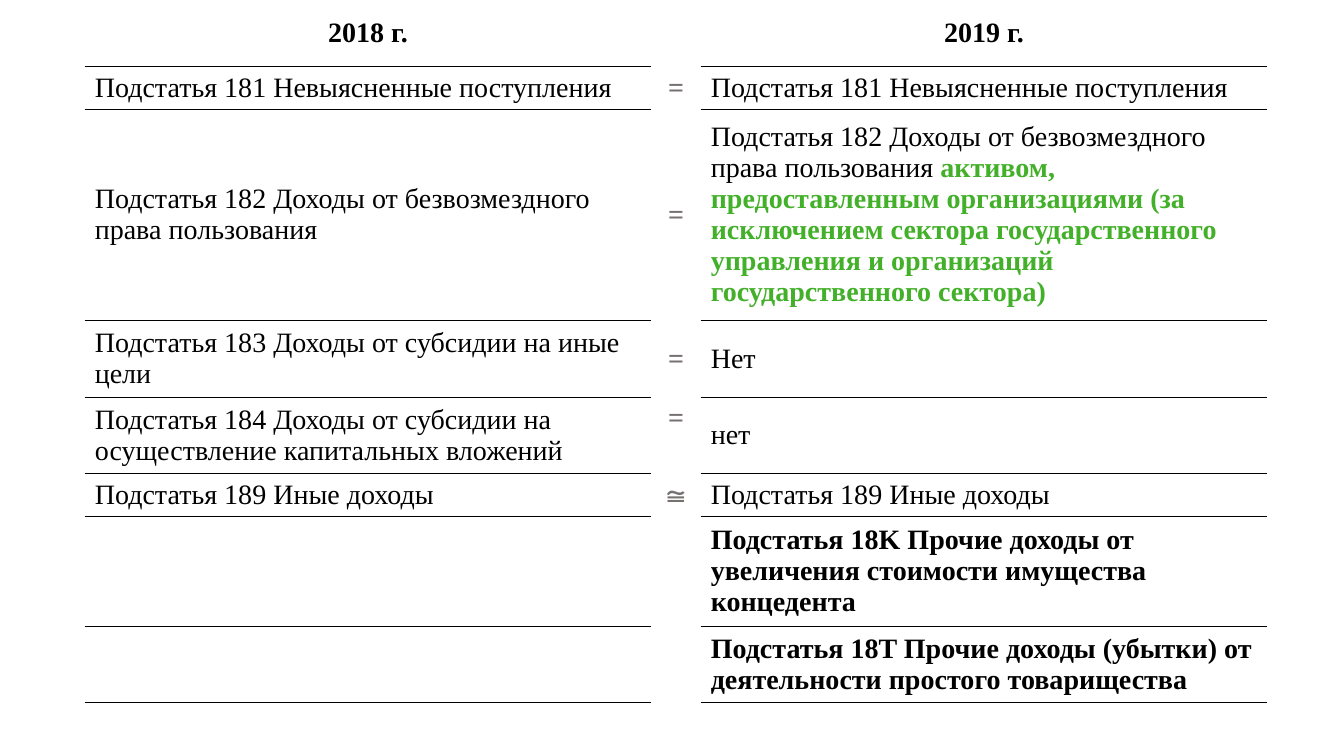
import dataclasses

import lxml.etree
import pptx
import pptx.dml.color
import pptx.enum.text
import pptx.oxml.ns
import pptx.util


@dataclasses.dataclass(frozen=True)
class Theme:
    font: str = "Times New Roman"
    size: float = 20
    text: str = "000000"
    sign: str = "767171"
    added: str = "43B02A"
    rule: float = 0.5
    header_rule: float = 1.5
    table_style: str = "{2D5ABB26-0587-4C30-8999-92F81FD0307C}"


THEME = Theme()
SLIDE_WIDTH, SLIDE_HEIGHT = 13.33, 7.5
TABLE_LEFT = 0.84
COLUMN_WIDTHS = (5.62, 0.49, 5.62)
ROW_HEIGHTS = (0.66, 0.42, 2.1, 0.76, 0.76, 0.42, 1.09, 0.76)
SIGN_COLUMN = 1
TOP_SIGN_ROW = 4

UNCLEAR = "Подстатья 181 Невыясненные поступления"
FREE_USE = "Подстатья 182 Доходы от безвозмездного права пользования"
FREE_USE_ADDED = (
    "активом, предоставленным организациями (за исключением сектора "
    "государственного управления и организаций государственного сектора)"
)
OTHER = "Подстатья 189 Иные доходы"


def plain(text):
    return [(text, THEME.text, False)]


def strong(text, color=THEME.text):
    return [(text, color, True)]


def sign(text):
    return strong(text, THEME.sign)


ROWS = (
    (strong("2018 г."), [], strong("2019 г.")),
    (plain(UNCLEAR), sign("="), plain(UNCLEAR)),
    (plain(FREE_USE), sign("="),
     plain(FREE_USE + " ") + strong(FREE_USE_ADDED, THEME.added)),
    (plain("Подстатья 183 Доходы от субсидии на иные цели"), sign("="), plain("Нет")),
    (plain("Подстатья 184 Доходы от субсидии на осуществление капитальных вложений"),
     sign("="), plain("нет")),
    (plain(OTHER), sign("≅"), plain(OTHER)),
    ([], [], strong("Подстатья 18K Прочие доходы от увеличения стоимости имущества концедента")),
    ([], [], strong("Подстатья 18T Прочие доходы (убытки) от деятельности простого товарищества")),
)


def add_rule(cell, side, width):
    properties = cell._tc.get_or_add_tcPr()
    line = lxml.etree.Element(pptx.oxml.ns.qn(f"a:{side}"), w=str(pptx.util.Pt(width)))
    fill = lxml.etree.SubElement(line, pptx.oxml.ns.qn("a:solidFill"))
    lxml.etree.SubElement(fill, pptx.oxml.ns.qn("a:srgbClr"), val=THEME.text)
    properties.insert(0, line)


def format_font(font, color, bold):
    font.color.rgb = pptx.dml.color.RGBColor.from_string(color)
    font.bold = bold


def write_cell(cell, pieces, centered):
    para = cell.text_frame.paragraphs[0]
    para.font.name = THEME.font
    para.font.size = pptx.util.Pt(THEME.size)
    if centered:
        para.alignment = pptx.enum.text.PP_ALIGN.CENTER
    for text, color, bold in pieces:
        span = para.add_run()
        span.text = text
        format_font(para.font if len(pieces) == 1 else span.font, color, bold)


def format_cell(cell, row, column):
    anchors = pptx.enum.text.MSO_ANCHOR
    at_top = (row, column) == (TOP_SIGN_ROW, SIGN_COLUMN)
    cell.vertical_anchor = anchors.TOP if at_top else anchors.MIDDLE
    cell.margin_left = cell.margin_right = pptx.util.Inches(0.1)
    cell.margin_top = cell.margin_bottom = pptx.util.Inches(0.05)
    cell.fill.background()
    if column != SIGN_COLUMN:
        add_rule(cell, "lnB", THEME.rule if row else THEME.header_rule)
        if row:
            add_rule(cell, "lnT", THEME.header_rule if row == 1 else THEME.rule)


def add_comparison(page):
    frame = page.shapes.add_table(
        len(ROWS), len(COLUMN_WIDTHS),
        pptx.util.Inches(TABLE_LEFT), 0,
        pptx.util.Inches(sum(COLUMN_WIDTHS)), pptx.util.Inches(sum(ROW_HEIGHTS)))
    table = frame.table
    table.horz_banding = False
    table.first_row = False
    table._tbl.tblPr.find(pptx.oxml.ns.qn("a:tableStyleId")).text = THEME.table_style
    for column, width in zip(table.columns, COLUMN_WIDTHS):
        column.width = pptx.util.Inches(width)
    for row, height in zip(table.rows, ROW_HEIGHTS):
        row.height = pptx.util.Inches(height)
    for row, contents in enumerate(ROWS):
        for column, pieces in enumerate(contents):
            cell = table.cell(row, column)
            format_cell(cell, row, column)
            write_cell(cell, pieces, row == 0 or column == SIGN_COLUMN)


def main():
    deck = pptx.Presentation()
    deck.slide_width = pptx.util.Inches(SLIDE_WIDTH)
    deck.slide_height = pptx.util.Inches(SLIDE_HEIGHT)
    page = deck.slides.add_slide(deck.slide_layouts[6])
    add_comparison(page)
    deck.save("out.pptx")


if __name__ == "__main__":
    main()
